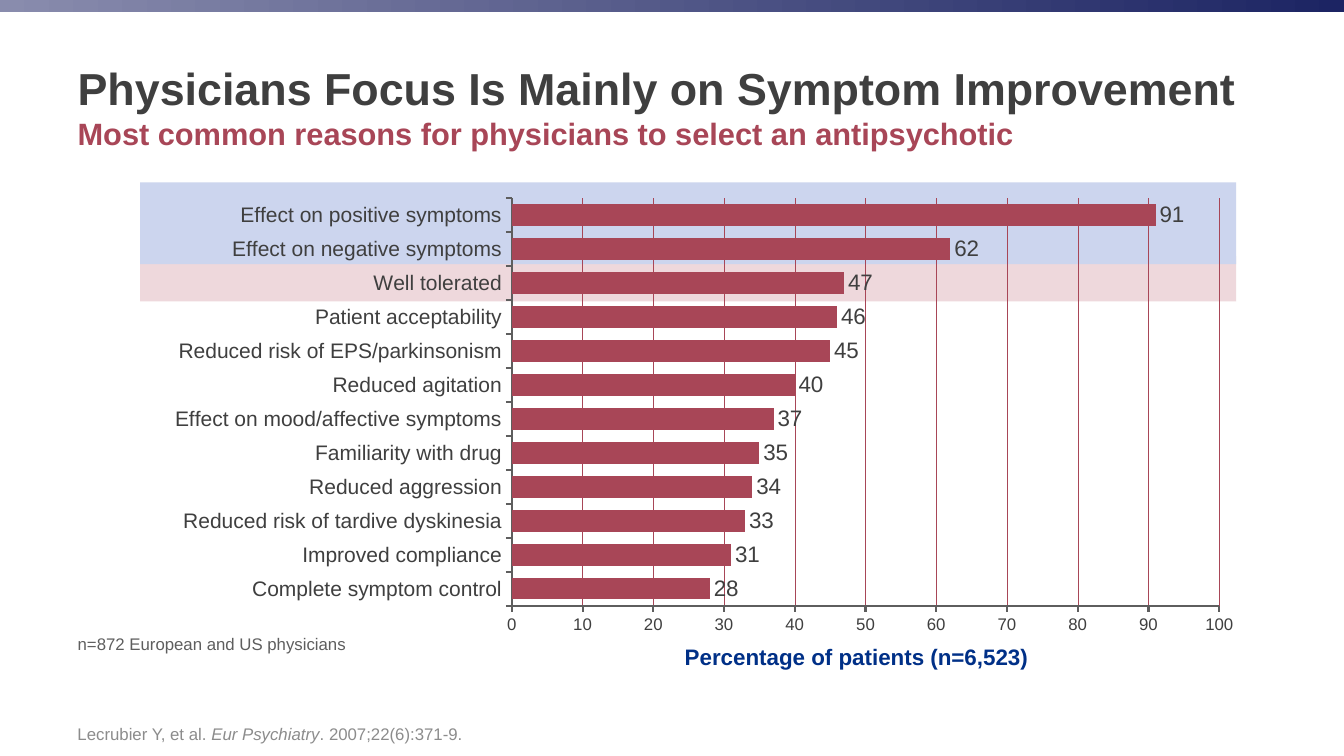
import pptx
import pptx.chart.data
import pptx.dml.color
import pptx.enum.chart
import pptx.enum.shapes
import pptx.enum.text
import pptx.oxml
import pptx.oxml.ns
import pptx.util

WIDE, HIGH = 13.33, 7.5
LEFT, SPAN = 0.67, 11.75
FONT = "Arial"
RED, DARK, GREY = "A84657", "3F3F3F", "5E5E5E"

TITLE = "Physicians Focus Is Mainly on Symptom Improvement"
SUB = "Most common reasons for physicians to select an antipsychotic"
NOTE = "n=872 European and US physicians"
XTITLE = "Percentage of patients (n=6,523)"
SOURCE = [("Lecrubier Y, et al. ", False), ("Eur Psychiatry", True),
          (". 2007;22(6):371-9.", False)]
REASONS = [
    ("Effect on positive symptoms", 91),
    ("Effect on negative symptoms", 62),
    ("Well tolerated", 47),
    ("Patient acceptability", 46),
    ("Reduced risk of EPS/parkinsonism", 45),
    ("Reduced agitation", 40),
    ("Effect on mood/affective symptoms", 37),
    ("Familiarity with drug", 35),
    ("Reduced aggression", 34),
    ("Reduced risk of tardive dyskinesia", 33),
    ("Improved compliance", 31),
    ("Complete symptom control", 28),
]
# top, height, colour, opacity in percent
BANDS = [(2.54, 0.45, "DFB2BA", 50), (1.81, 0.81, "CCD5EE", 100)]
PLOT = {"x": 0.346, "y": 0.043, "w": 0.556, "h": 0.889}

Pt = pptx.util.Pt
ANCHOR = pptx.enum.text.MSO_ANCHOR
ALIGN = pptx.enum.text.PP_ALIGN
qn = pptx.oxml.ns.qn


def color(code):
    return pptx.dml.color.RGBColor.from_string(code)


def box(*sizes):
    return [pptx.util.Inches(size) for size in sizes]


def style(font, size, code, bold=False, italic=False):
    font.name, font.size = FONT, Pt(size)
    font.bold, font.italic = bold, italic
    font.color.rgb = color(code)


def write(shape, place, runs, size, code, bold=False,
          align=ALIGN.LEFT, anchor=ANCHOR.TOP):
    """Place a text shape and fill its one paragraph with (text, italic) runs."""
    shape.left, shape.top, shape.width, shape.height = box(*place)
    frame = shape.text_frame
    frame.word_wrap = True
    frame.auto_size = pptx.enum.text.MSO_AUTO_SIZE.NONE
    frame.vertical_anchor = anchor
    para = frame.paragraphs[0]
    para.alignment = align
    para.space_before = Pt(0)
    for text, italic in runs:
        run = para.add_run()
        run.text = text
        style(run.font, size, code, bold, italic)
    return para


def plain(para):
    """Remove the bullet and its indent."""
    props = para._p.get_or_add_pPr()
    props.set("marL", "0")
    props.set("indent", "0")
    props.append(pptx.oxml.parse_xml(
        f'<a:buNone {pptx.oxml.ns.nsdecls("a")}/>'))


def block(slide, *place):
    shape = slide.shapes.add_shape(
        pptx.enum.shapes.MSO_SHAPE.RECTANGLE, *box(*place))
    shape.shadow.inherit = False
    shape.line.fill.background()
    return shape


def draw_bands(slide):
    bar = block(slide, 0, 0, WIDE, 0.12)
    bar.fill.gradient()
    bar.fill.gradient_angle = 0
    for stop, code in zip(bar.fill.gradient_stops, ("898CAD", "1C2463")):
        stop.color.rgb = color(code)
    for top, high, code, share in BANDS:
        band = block(slide, 1.39, top, 10.87, high)
        band.fill.solid()
        band.fill.fore_color.rgb = color(code)
        if share < 100:
            tint = band._element.spPr.find(".//" + qn("a:srgbClr"))
            tint.append(pptx.oxml.parse_xml(
                f'<a:alpha {pptx.oxml.ns.nsdecls("a")} val="{share * 1000}"/>'))


def set_plot(chart):
    """Fix the inner plot area at shares of the chart's size."""
    parts = '<c:layoutTarget val="inner"/>'
    parts += "".join(f'<c:{k}Mode val="edge"/>' for k in "xy")
    parts += "".join(f'<c:{k} val="{v}"/>' for k, v in PLOT.items())
    area = chart._chartSpace.find(".//" + qn("c:plotArea"))
    old = area.find(qn("c:layout"))
    if old is not None:
        area.remove(old)
    area.insert(0, pptx.oxml.parse_xml(
        f'<c:layout {pptx.oxml.ns.nsdecls("c")}>'
        f'<c:manualLayout>{parts}</c:manualLayout></c:layout>'))


def draw_chart(slide):
    enum = pptx.enum.chart
    data = pptx.chart.data.CategoryChartData()
    names, vals = zip(*reversed(REASONS))
    data.categories = names
    data.add_series("Series 1", vals)
    chart = slide.shapes.add_chart(
        enum.XL_CHART_TYPE.BAR_CLUSTERED,
        *box(0.71, 1.77, 12.62, 4.55), data).chart
    chart.has_legend = chart.has_title = False
    style(chart.font, 18, DARK)
    set_plot(chart)

    for axis, size in ((chart.category_axis, 15), (chart.value_axis, 12)):
        style(axis.tick_labels.font, size, DARK)
        axis.major_tick_mark = enum.XL_TICK_MARK.OUTSIDE
        axis.minor_tick_mark = enum.XL_TICK_MARK.NONE
        axis.format.line.width = Pt(1.5)
        axis.format.line.color.rgb = color(GREY)
    chart.category_axis.has_major_gridlines = False
    scale = chart.value_axis
    scale.minimum_scale, scale.maximum_scale, scale.major_unit = 0, 100, 10
    scale.tick_labels.number_format = "#,##0"
    scale.tick_labels.number_format_is_linked = False
    scale.has_major_gridlines = True
    grid = scale.major_gridlines.format.line
    grid.width = Pt(0.25)
    grid.color.rgb = color(RED)

    plot = chart.plots[0]
    plot.gap_width = 58
    plot.vary_by_categories = False
    fill = plot.series[0].format.fill
    fill.solid()
    fill.fore_color.rgb = color(RED)
    labels = plot.series[0].data_labels
    labels.show_value = True
    labels.number_format = "0"
    labels.number_format_is_linked = False
    labels.position = enum.XL_LABEL_POSITION.OUTSIDE_END
    style(labels.font, 16, DARK)


def main():
    deck = pptx.Presentation()
    deck.slide_width, deck.slide_height = box(WIDE, HIGH)
    slide = deck.slides.add_slide(deck.slide_layouts.get_by_name("Two Content"))
    title, note, sub = slide.placeholders
    draw_bands(slide)
    write(title, (LEFT, 0.22, SPAN, 1.3), [(TITLE, False)], 32, DARK, True,
          anchor=ANCHOR.MIDDLE)
    plain(write(note, (LEFT, 6.24, 3.83, 0.51), [(NOTE, False)], 12, GREY))
    plain(write(sub, (LEFT, 1.09, 11.33, 0.47), [(SUB, False)], 22, RED, True))
    draw_chart(slide)
    xname, source = (slide.shapes.add_textbox(0, 0, 0, 0) for _ in range(2))
    write(xname, (5.11, 6.33, 6.77, 0.37), [(XTITLE, False)], 16, "003087",
          True, ALIGN.CENTER)
    write(source, (LEFT, 6.95, SPAN, 0.48), SOURCE, 12, "8C8C8C",
          anchor=ANCHOR.BOTTOM)
    deck.save("out.pptx")


if __name__ == "__main__":
    main()
